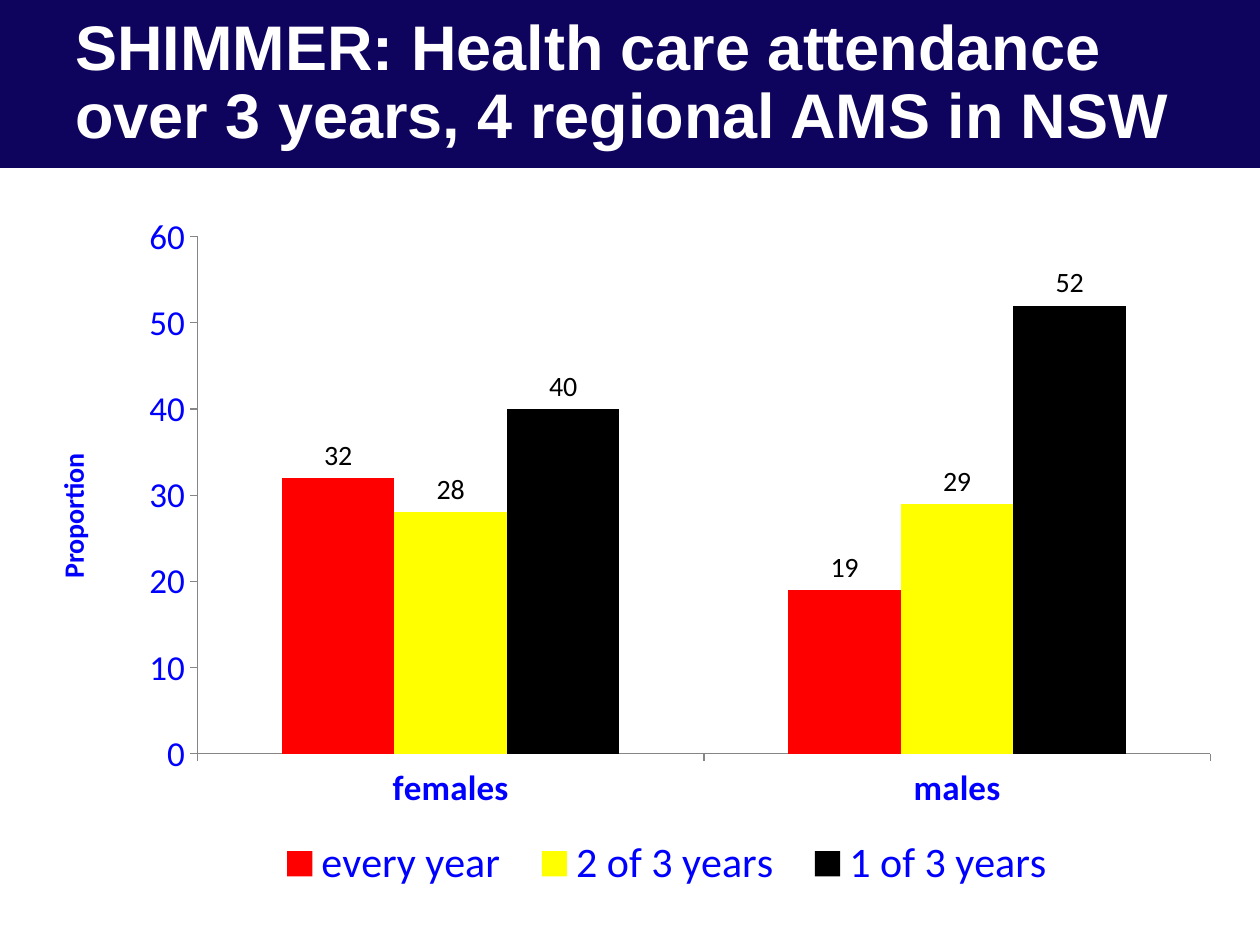
from lxml import etree
from pptx import Presentation
from pptx.chart.data import CategoryChartData
from pptx.dml.color import RGBColor
from pptx.enum.chart import XL_CHART_TYPE as ChartType, XL_LABEL_POSITION as LabelPos
from pptx.enum.chart import XL_LEGEND_POSITION as LegendPos, XL_TICK_MARK as Tick
from pptx.enum.shapes import MSO_SHAPE as Shape
from pptx.enum.text import MSO_ANCHOR as Anchor
from pptx.oxml.ns import qn
from pptx.util import Emu, Pt

NAVY = RGBColor(0x0E, 0x03, 0x5D)
WHITE = RGBColor(0xFF, 0xFF, 0xFF)
BLACK = RGBColor(0, 0, 0)
BLUE = RGBColor(0, 0, 0xFF)
RED = RGBColor(0xFF, 0, 0)
YELLOW = RGBColor(0xFF, 0xFF, 0)
GREY = RGBColor(0x86, 0x86, 0x86)


def px(*lengths):
    return [Emu(round(length * 914400 / 126)) for length in lengths]


def place(part, after, target=None, **fractions):
    for old in part.findall(qn("c:layout")):
        part.remove(old)
    layout = etree.Element(qn("c:layout"))
    manual = etree.SubElement(layout, qn("c:manualLayout"))
    if target:
        etree.SubElement(manual, qn("c:layoutTarget")).set("val", target)
    for edge in ("x", "y"):
        etree.SubElement(manual, qn(f"c:{edge}Mode")).set("val", "edge")
    for key, value in fractions.items():
        etree.SubElement(manual, qn(f"c:{key}")).set("val", str(value))
    if after is None:
        part.insert(0, layout)
    else:
        part.find(qn(after)).addnext(layout)


prs = Presentation()
prs.slide_width, prs.slide_height = px(1260, 945)
slide = prs.slides.add_slide(prs.slide_layouts[6])

banner = slide.shapes.add_shape(Shape.RECTANGLE, *px(0, 0, 1260, 168))
banner.shadow.inherit = False
banner.fill.solid()
banner.fill.fore_color.rgb = NAVY
banner.line.fill.background()

heading = slide.shapes.add_textbox(*px(63, 0, 1134, 168)).text_frame
heading.word_wrap = True
heading.vertical_anchor = Anchor.MIDDLE
headline = heading.paragraphs[0]
headline.text = "SHIMMER: Health care attendance over 3 years, 4 regional AMS in NSW"
headline.line_spacing = 0.9
headline.font.name = "Arial"
headline.font.size = Pt(36)
headline.font.bold = True
headline.font.color.rgb = WHITE

attendance = CategoryChartData()
attendance.categories = ["females", "males"]
attendance.add_series("every year", (32, 19))
attendance.add_series("2 of 3 years", (28, 29))
attendance.add_series("1 of 3 years", (40, 52))
chart = slide.shapes.add_chart(
    ChartType.COLUMN_CLUSTERED, *px(0, 215, 1235, 709), attendance).chart
chart.has_title = False
chart.font.name = "Calibri"
chart.font.size = Pt(10)
chart.font.color.rgb = BLACK

columns = chart.plots[0]
columns.gap_width = 150
columns.overlap = 0
columns.vary_by_categories = False
for series, color in zip(columns.series, (RED, YELLOW, BLACK)):
    series.format.fill.solid()
    series.format.fill.fore_color.rgb = color
    labels = series.data_labels
    labels.show_value = True
    labels.position = LabelPos.OUTSIDE_END
    labels.font.size = Pt(16)
    labels.font.color.rgb = BLACK

sexes, proportion = chart.category_axis, chart.value_axis
for axis, bold in ((sexes, True), (proportion, False)):
    axis.has_major_gridlines = False
    axis.major_tick_mark = Tick.OUTSIDE
    axis.minor_tick_mark = Tick.NONE
    axis.format.line.color.rgb = GREY
    axis.format.line.width = Pt(0.75)
    axis.tick_labels.font.size = Pt(20)
    axis.tick_labels.font.bold = bold
    axis.tick_labels.font.color.rgb = BLUE
proportion.minimum_scale = 0
proportion.maximum_scale = 60
proportion.major_unit = 10

proportion.axis_title.text_frame.text = "Proportion"
caption = proportion.axis_title.text_frame.paragraphs[0]
caption.font.size = Pt(16)
caption.font.bold = True
caption.font.color.rgb = BLUE

chart.has_legend = True
legend = chart.legend
legend.position = LegendPos.RIGHT
legend.include_in_layout = False
legend.font.size = Pt(24)
legend.font.color.rgb = BLUE

plot_area = chart.element.find(".//" + qn("c:plotArea"))
place(plot_area, None, "inner", x=0.16, y=0.03, w=0.82, h=0.73)
place(plot_area.find(".//" + qn("c:valAx") + "/" + qn("c:title")), "c:tx", x=0.04, y=0.33)
place(chart.element.find(".//" + qn("c:legend")), "c:legendPos", x=0.21, y=0.87, w=0.66, h=0.09)

prs.save("out.pptx")
